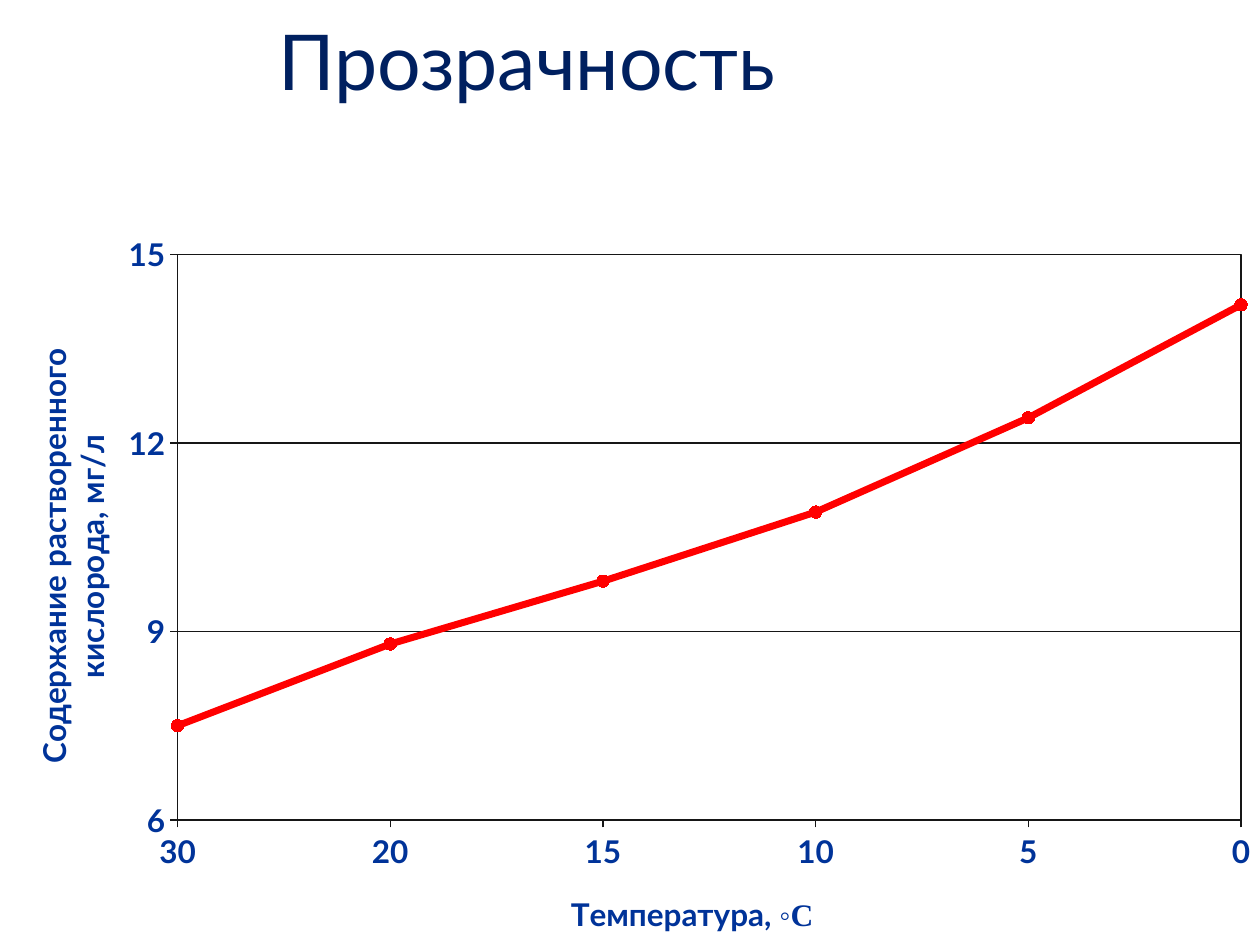
from lxml import etree
from pptx import Presentation
from pptx.chart.data import CategoryChartData
from pptx.dml.color import RGBColor
from pptx.enum.chart import XL_CHART_TYPE, XL_MARKER_STYLE, XL_TICK_MARK
from pptx.enum.text import MSO_ANCHOR
from pptx.oxml import parse_xml
from pptx.oxml.ns import nsdecls, qn
from pptx.util import Inches, Pt

LINE_MARKERS = XL_CHART_TYPE.LINE_MARKERS
CIRCLE = XL_MARKER_STYLE.CIRCLE
OUTSIDE = XL_TICK_MARK.OUTSIDE
MIDDLE = MSO_ANCHOR.MIDDLE

NAVY = RGBColor(0x00, 0x20, 0x60)
BLUE = RGBColor(0x00, 0x33, 0x99)
RED = RGBColor(0xFF, 0x00, 0x00)
INK = RGBColor(0x16, 0x16, 0x16)
FONT = "Lato"
SYMBOL_FONT = "Times New Roman"

TEMPERATURES = ["30", "20", "15", "10", "5", "0"]
OXYGEN = [7.5, 8.8, 9.8, 10.9, 12.4, 14.2]


def style_font(font, size, color, bold=False, name=FONT):
    """Set the face, size, colour and weight of a font."""
    font.name = name
    font.size = Pt(size)
    font.bold = bold
    font.color.rgb = color


def style_line(line, color, width):
    """Give a line a solid colour and a width in points."""
    line.color.rgb = color
    line.width = Pt(width)


def place(element, **settings):
    """Write a manual layout into a chart element."""
    layout = element.find(qn("c:layout"))
    if layout is None:
        layout = parse_xml(f"<c:layout {nsdecls('c')}/>")
        element.insert(0, layout)
    manual = etree.SubElement(layout, qn("c:manualLayout"))
    for name, value in settings.items():
        etree.SubElement(manual, qn(f"c:{name}")).set("val", str(value))


def add_title(slide, text):
    """Add the slide heading."""
    shape = slide.shapes.add_textbox(Inches(2.11), Inches(0.08), Inches(7.3), Inches(0.78))
    text_frame = shape.text_frame
    text_frame.word_wrap = True
    text_frame.vertical_anchor = MIDDLE
    text_frame.text = text
    style_font(text_frame.paragraphs[0].runs[0].font, 44, NAVY)


def style_axis(axis, title, left, top, symbol=""):
    """Format an axis and add its title at a fraction of the chart."""
    style_font(axis.tick_labels.font, 18, BLUE, bold=True)
    style_line(axis.format.line, INK, 0.75)
    axis.major_tick_mark = OUTSIDE
    text_frame = axis.axis_title.text_frame
    text_frame.text = title
    paragraph = text_frame.paragraphs[0]
    style_font(paragraph.runs[0].font, 18, BLUE, bold=True)
    if symbol:
        run = paragraph.add_run()
        run.text = symbol
        style_font(run.font, 18, BLUE, bold=True, name=SYMBOL_FONT)
    place(axis.axis_title._element, xMode="edge", yMode="edge", x=left, y=top)


def start_line_on_axis(plot_area):
    """Put the data points on the tick marks."""
    crosses = plot_area.find(f"{qn('c:valAx')}/{qn('c:crosses')}")
    crosses.addnext(parse_xml(f"<c:crossBetween {nsdecls('c')} val='midCat'/>"))


def frame_plot(plot_area):
    """Position the plot area and outline it."""
    place(plot_area, layoutTarget="inner", xMode="edge", yMode="edge",
          x=0.141, y=0.022, w=0.844, h=0.801)
    plot_area.append(parse_xml(
        f"<c:spPr {nsdecls('c', 'a')}><a:noFill/><a:ln w='{int(Pt(0.75))}'>"
        f"<a:solidFill><a:srgbClr val='{INK}'/></a:solidFill></a:ln></c:spPr>"))


def add_oxygen_chart(slide):
    """Add the line chart of dissolved oxygen against temperature."""
    data = CategoryChartData()
    data.categories = TEMPERATURES
    data.add_series("Series 1", OXYGEN)
    chart = slide.shapes.add_chart(
        LINE_MARKERS, Inches(0), Inches(1.87), Inches(10), Inches(5.63), data).chart
    chart.has_title = False
    chart.has_legend = False
    style_font(chart.font, 18, BLUE)
    chart.plots[0].vary_by_categories = False

    series = chart.plots[0].series[0]
    series.smooth = False
    style_line(series.format.line, RED, 4)
    series.marker.style = CIRCLE
    series.marker.size = 7
    series.marker.format.fill.solid()
    series.marker.format.fill.fore_color.rgb = RED
    style_line(series.marker.format.line, RED, 0.75)

    style_axis(chart.category_axis, "Температура, ", 0.45, 0.92, symbol="◦С")
    value_axis = chart.value_axis
    style_axis(value_axis, "Содержание растворенного кислорода, мг/л", 0.02, 0.15)
    value_axis.axis_title.text_frame._txBody.bodyPr.set("rot", "-5400000")
    value_axis.minimum_scale = 6
    value_axis.maximum_scale = 15
    value_axis.major_unit = 3
    value_axis.tick_labels.number_format = "General"
    value_axis.tick_labels.number_format_is_linked = False
    style_line(value_axis.major_gridlines.format.line, INK, 0.75)

    plot_area = chart._chartSpace.chart.plotArea
    start_line_on_axis(plot_area)
    frame_plot(plot_area)


def main():
    """Build the slide and save it."""
    presentation = Presentation()
    presentation.slide_width = Inches(10)
    presentation.slide_height = Inches(7.5)
    slide = presentation.slides.add_slide(presentation.slide_layouts[6])
    add_title(slide, "Прозрачность")
    add_oxygen_chart(slide)
    presentation.save("out.pptx")


if __name__ == "__main__":
    main()
